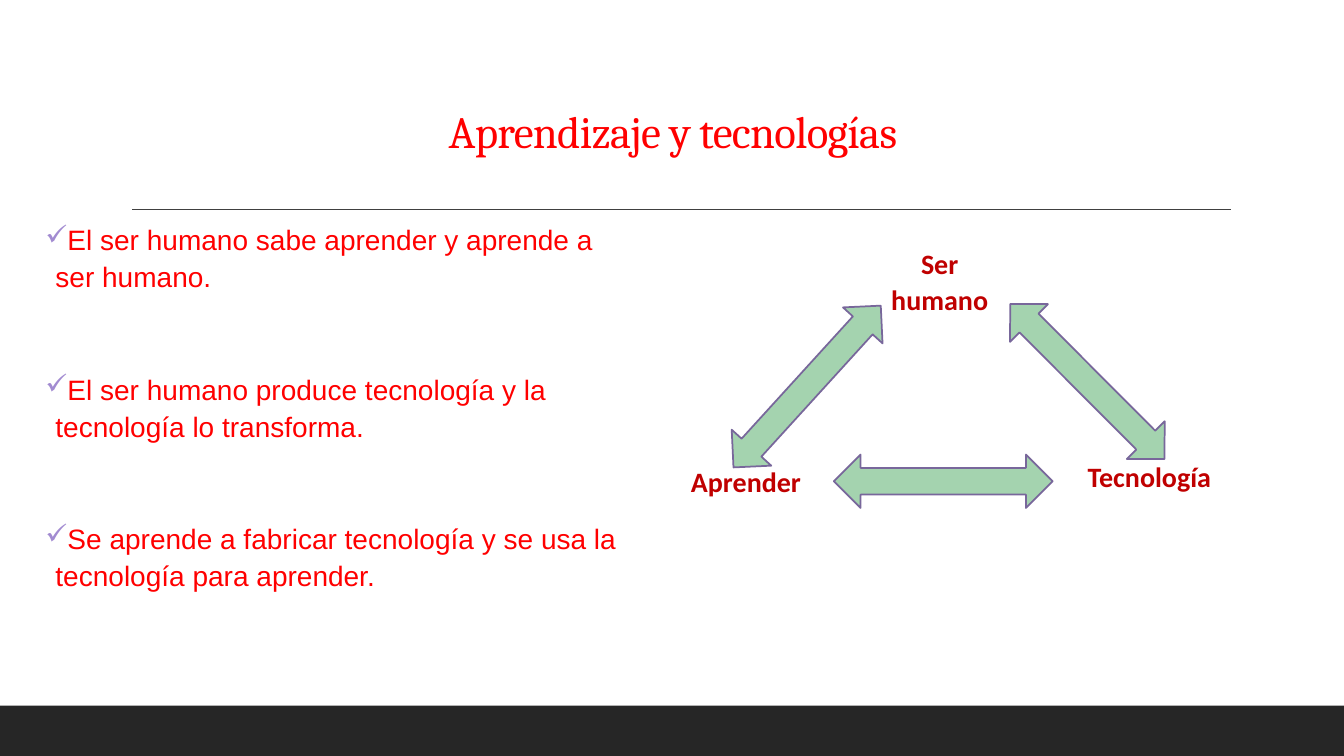
from pptx import Presentation
from pptx.dml.color import RGBColor
from pptx.enum import shapes, text
from pptx.oxml import parse_xml
from pptx.oxml.ns import nsdecls
from pptx.util import Emu, Inches, Pt

TITLE = "Aprendizaje y tecnologías"
POINTS = [
    "El ser humano sabe aprender y aprende a ser humano.",
    "El ser humano produce tecnología y la tecnología lo transforma.",
    "Se aprende a fabricar tecnología y se usa la tecnología para aprender.",
]
LABELS = [
    ("Ser humano", 8.58, 2.37, 0.81, 1.25),
    ("Tecnología", 10.66, 4.49, 0.59, 0.75),
    ("Aprender ", 6.69, 4.54, 0.59, 0.75),
]
ARROWS = [(9.09, 3.69, 90), (10.52, 2.7, 315.1), (7.74, 2.75, 42.3)]
RED, DARK, WHITE = "FF0000", "C00000", "FFFFFF"
MINT, PLUM = "A4D3AF", "78679B"


def color(code):
    return RGBColor.from_string(code)


def style(para, name, size, code, bold=False):
    for run in para.runs:
        font = run.font
        font.name, font.size, font.bold = name, Pt(size), bold
        font.color.rgb = color(code)


def draw(slide, kind, box, fill, edge=None, width=1):
    shape = slide.shapes.add_shape(kind, *map(Inches, box))
    shape.shadow.inherit = False
    shape.fill.solid()
    shape.fill.fore_color.rgb = color(fill)
    if edge:
        shape.line.color.rgb = color(edge)
        shape.line.width = Pt(width)
    else:
        shape.line.fill.background()
    return shape


def frame(slide):
    draw(slide, shapes.MSO_SHAPE.RECTANGLE, (0, 7, 13.33, 0.5), "262626")
    ends = map(Inches, (1.31, 2.08, 12.21, 2.08))
    rule = slide.shapes.add_connector(shapes.MSO_CONNECTOR.STRAIGHT, *ends)
    rule.line.color.rgb = color("404040")
    rule.line.width = Pt(1)
    rule._element.spPr.append(parse_xml(f"<a:effectLst {nsdecls('a')}/>"))


def head(slide):
    title = slide.shapes.title
    title.left, title.top, title.width, title.height = map(
        Inches, (4.35, 0.96, 11.5, 0.66))
    body = title.text_frame
    body.text = TITLE
    body.auto_size = text.MSO_AUTO_SIZE.NONE
    body.vertical_anchor = text.MSO_ANCHOR.BOTTOM
    para = body.paragraphs[0]
    para.alignment = text.PP_ALIGN.LEFT
    para.line_spacing = 0.9
    style(para, "Cambria", 32, RED)
    para.runs[0].font._element.set("spc", "-50")


def bullet(para):
    props = para._p.get_or_add_pPr()
    props.set("marL", str(Inches(0.1)))
    props.set("indent", str(Inches(-0.1)))
    props.append(parse_xml(
        f'<a:buClr {nsdecls("a")}><a:srgbClr val="A28BD1"/></a:buClr>'))
    props.append(parse_xml(f'<a:buChar {nsdecls("a")} char="✓"/>'))


def points(slide):
    box = slide.shapes.add_textbox(*map(Inches, (0.45, 2.13, 5.68, 4.76)))
    body = box.text_frame
    body.word_wrap = True
    body.margin_left = body.margin_right = Emu(0)
    body.text = "\n".join(POINTS)
    for i, para in enumerate(body.paragraphs):
        para.line_spacing = 1.1
        para.space_before = Pt(52 if i else 12)
        para.space_after = Pt(2)
        bullet(para)
        style(para, "Arial", 20, RED)


def cycle(slide):
    for word, left, top, high, width in LABELS:
        label = draw(slide, shapes.MSO_SHAPE.RECTANGLE,
                     (left, top, 1.48, high), WHITE, WHITE, width)
        body = label.text_frame
        body.text = word
        body.word_wrap = True
        body.vertical_anchor = text.MSO_ANCHOR.TOP
        para = body.paragraphs[0]
        para.alignment = text.PP_ALIGN.CENTER
        para.line_spacing = 1.07
        para.space_after = Pt(8)
        style(para, "Calibri", 20, DARK, True)
    for left, top, turn in ARROWS:
        arrow = draw(slide, shapes.MSO_SHAPE.UP_DOWN_ARROW,
                     (left, top, 0.53, 2.17), MINT, PLUM, 1.25)
        arrow.rotation = turn


def main():
    deck = Presentation()
    deck.slide_width, deck.slide_height = Inches(13.33), Inches(7.5)
    slide = deck.slides.add_slide(deck.slide_layouts[5])
    frame(slide)
    head(slide)
    points(slide)
    cycle(slide)
    deck.save("out.pptx")


if __name__ == "__main__":
    main()
